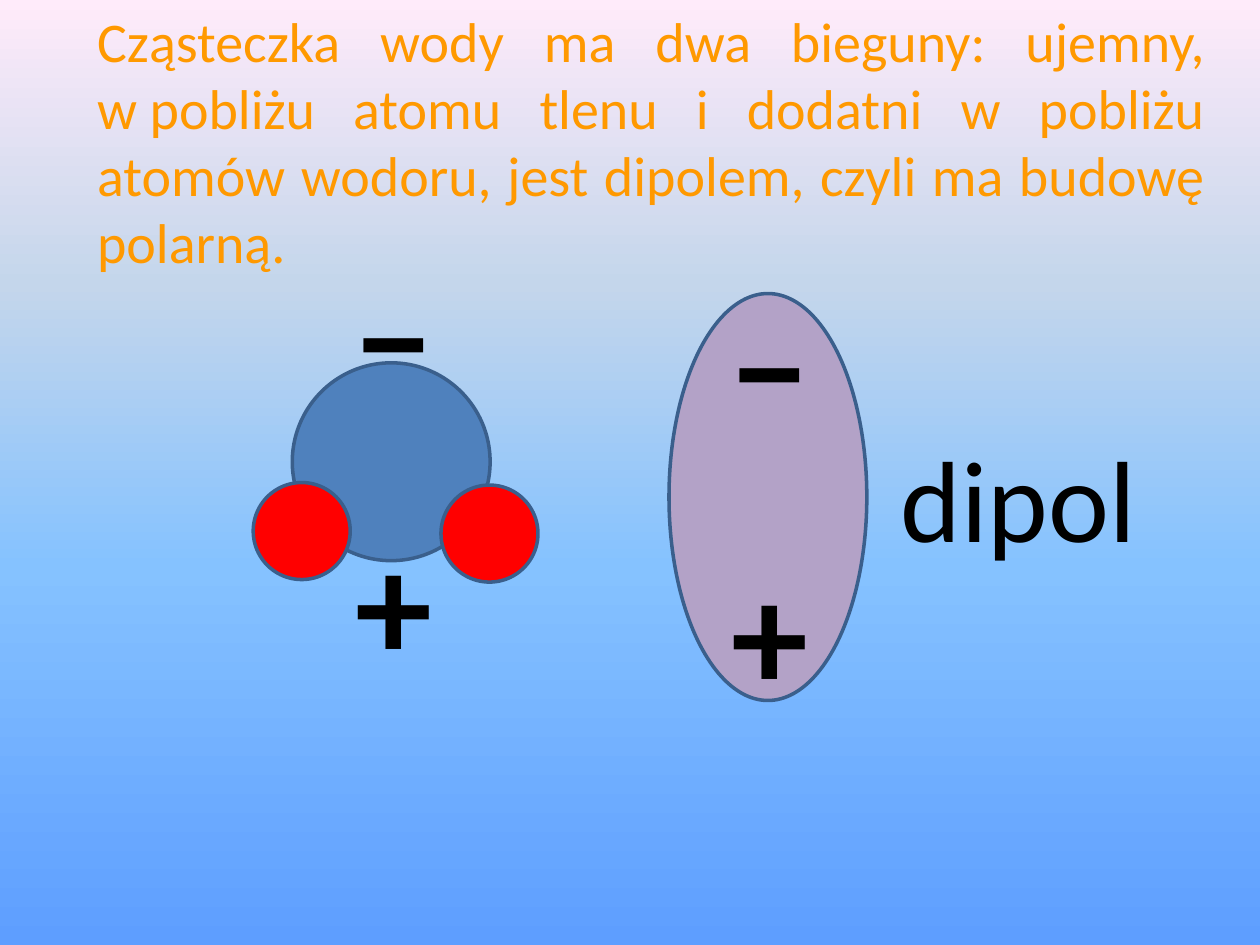
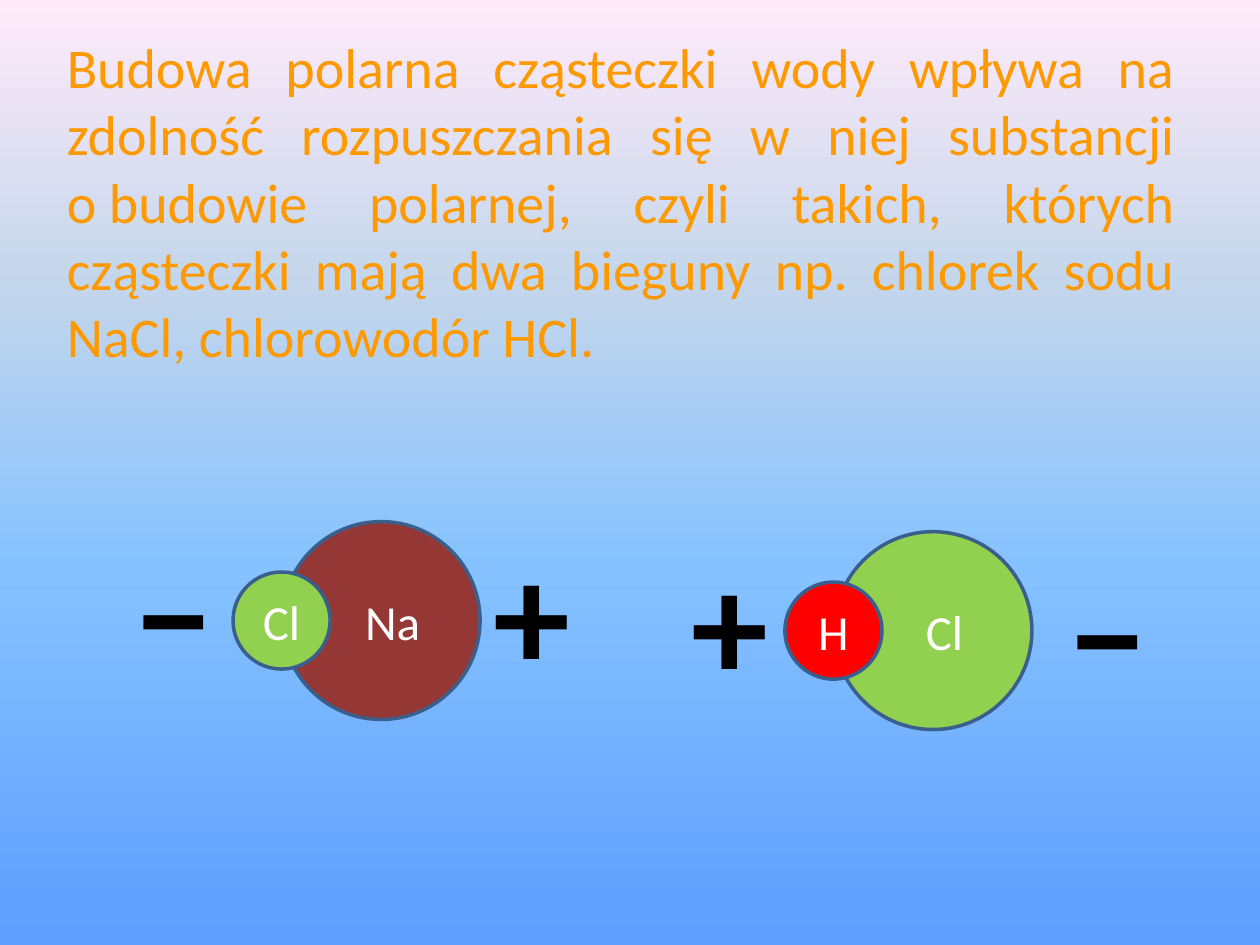
"""Build two slides on the polar structure of the water molecule."""
import pptx
import pptx.dml.color
import pptx.enum.shapes
import pptx.enum.text
import pptx.oxml.ns
import pptx.util
from lxml import etree

Inches, Pt = pptx.util.Inches, pptx.util.Pt
RGBColor = pptx.dml.color.RGBColor
qn = pptx.oxml.ns.qn
MSO_ANCHOR = pptx.enum.text.MSO_ANCHOR
MSO_AUTO_SIZE = pptx.enum.text.MSO_AUTO_SIZE
PP_ALIGN = pptx.enum.text.PP_ALIGN

ORANGE = RGBColor(0xFF, 0x99, 0x00)
BLACK = RGBColor(0x00, 0x00, 0x00)
WHITE = RGBColor(0xFF, 0xFF, 0xFF)
OUTLINE = RGBColor(0x3A, 0x5F, 0x8C)
OXYGEN_BLUE = RGBColor(0x4F, 0x81, 0xBD)
HYDROGEN_RED = RGBColor(0xFF, 0x00, 0x00)
CHLORINE_GREEN = RGBColor(0x92, 0xD0, 0x50)
SODIUM_BROWN = RGBColor(0x95, 0x37, 0x35)
DIPOLE_VIOLET = RGBColor(0xB3, 0xA2, 0xC7)
SKY_STOPS = [
    (0, RGBColor(0x5E, 0x9E, 0xFF)),
    (40, RGBColor(0x85, 0xC2, 0xFF)),
    (70, RGBColor(0xC4, 0xD6, 0xEB)),
    (100, RGBColor(0xFF, 0xEB, 0xFA)),
]

STATEMENT = {"size": Pt(32), "name": "Calibri", "bold": False}
SYMBOL = {"size": Pt(28), "name": "Calibri", "bold": False}
CHARGE = {"size": Pt(88), "name": "Calibri", "bold": True}
CAPTION = {"size": Pt(66), "name": "Calibri", "bold": False}

LARGE = (1.57, 1.57)
SMALL = (0.77, 0.77)
DIPOLE = (1.57, 3.23)
CHARGE_BOX = (0.82, 1.58)
CAPTION_BOX = (2.08, 1.21)
CLEAR_OF_SMALL_ATOM = 0.28
HARD_SPACE = chr(160)

SLIDES = [
    {
        "statement": f"Cząsteczka wody ma dwa bieguny: ujemny, w{HARD_SPACE}pobliżu atomu tlenu "
                     "i dodatni w pobliżu atomów wodoru, jest dipolem, czyli ma budowę polarną.",
        "box": (0.67, 0, 9, 4.95),
        "molecules": [
            {
                "ovals": [
                    (2.32, 2.88, LARGE, OXYGEN_BLUE, ""),
                    (2.01, 3.83, SMALL, HYDROGEN_RED, ""),
                    (3.5, 3.85, SMALL, HYDROGEN_RED, ""),
                ],
                "labels": [
                    (2.72, 1.86, CHARGE_BOX, "−", CHARGE),
                    (2.72, 3.98, CHARGE_BOX, "+", CHARGE),
                ],
            },
            {
                "ovals": [(5.31, 2.33, DIPOLE, DIPOLE_VIOLET, "")],
                "labels": [
                    (5.71, 2.1, CHARGE_BOX, "−", CHARGE),
                    (5.71, 4.22, CHARGE_BOX, "+", CHARGE),
                    (7.05, 3.34, CAPTION_BOX, "dipol", CAPTION),
                ],
            },
        ],
    },
    {
        "statement": "Budowa polarna cząsteczki wody wpływa na zdolność rozpuszczania się w niej "
                     f"substancji o{HARD_SPACE}budowie polarnej, czyli takich, których cząsteczki "
                     "mają dwa bieguny np. chlorek sodu NaCl, chlorowodór HCl.",
        "box": (0.43, 0.21, 9, 3.23),
        "molecules": [
            {
                "ovals": [
                    (2.24, 4.14, LARGE, SODIUM_BROWN, "Na"),
                    (1.85, 4.54, SMALL, CHLORINE_GREEN, "Cl"),
                ],
                "labels": [
                    (0.98, 4.06, CHARGE_BOX, "−", CHARGE),
                    (3.82, 4.06, CHARGE_BOX, "+", CHARGE),
                ],
            },
            {
                "ovals": [
                    (6.62, 4.22, LARGE, CHLORINE_GREEN, "Cl"),
                    (6.23, 4.62, SMALL, HYDROGEN_RED, "H"),
                ],
                "labels": [
                    (8.39, 4.22, CHARGE_BOX, "−", CHARGE),
                    (5.39, 4.14, CHARGE_BOX, "+", CHARGE),
                ],
            },
        ],
    },
]


def write(frame, text, style, color, align):
    """Put one formatted run into a text frame."""
    paragraph = frame.paragraphs[0]
    paragraph.alignment = align
    run = paragraph.add_run()
    run.text = text
    for attribute, value in style.items():
        setattr(run.font, attribute, value)
    run.font.color.rgb = color
    return paragraph


prs = pptx.Presentation()
prs.slide_width, prs.slide_height = Inches(10), Inches(7.5)

sky = prs.slide_master.background.fill
sky.gradient()
sky.gradient_angle = 90
stop_list = next(prs.slide_master.element.iter(qn("a:gsLst")))
for stop in list(stop_list):
    stop_list.remove(stop)
for percent, color in SKY_STOPS:
    stop = etree.SubElement(stop_list, qn("a:gs"), pos=str(percent * 1000))
    etree.SubElement(stop, qn("a:srgbClr"), val=str(color))

for content in SLIDES:
    slide = prs.slides.add_slide(prs.slide_layouts[1])
    heading = slide.shapes.title.element
    heading.getparent().remove(heading)

    statement = slide.placeholders[1]
    statement.left, statement.top, statement.width, statement.height = map(Inches, content["box"])
    statement.text_frame.auto_size = MSO_AUTO_SIZE.NONE
    paragraph = write(statement.text_frame, content["statement"], STATEMENT, ORANGE, PP_ALIGN.JUSTIFY)
    properties = paragraph._p.get_or_add_pPr()
    properties.set("marL", "0")
    properties.set("indent", "0")
    etree.SubElement(properties, qn("a:buNone"))

    for molecule in content["molecules"]:
        parts = slide.shapes.add_group_shape().shapes
        for left, top, size, color, symbol in molecule["ovals"]:
            oval = parts.add_shape(pptx.enum.shapes.MSO_SHAPE.OVAL, *map(Inches, (left, top, *size)))
            oval.shadow.inherit = False
            oval.fill.solid()
            oval.fill.fore_color.rgb = color
            oval.line.color.rgb = OUTLINE
            oval.line.width = Pt(2)
            if symbol:
                oval.text_frame.vertical_anchor = MSO_ANCHOR.MIDDLE
                write(oval.text_frame, symbol, SYMBOL, WHITE, PP_ALIGN.CENTER)
                if size == LARGE:
                    oval.text_frame.margin_left = Inches(CLEAR_OF_SMALL_ATOM)
        for left, top, size, text, style in molecule["labels"]:
            label = parts.add_textbox(*map(Inches, (left, top, *size))).text_frame
            label.word_wrap = False
            label.auto_size = MSO_AUTO_SIZE.SHAPE_TO_FIT_TEXT
            write(label, text, style, BLACK, PP_ALIGN.LEFT)

prs.save("out.pptx")
